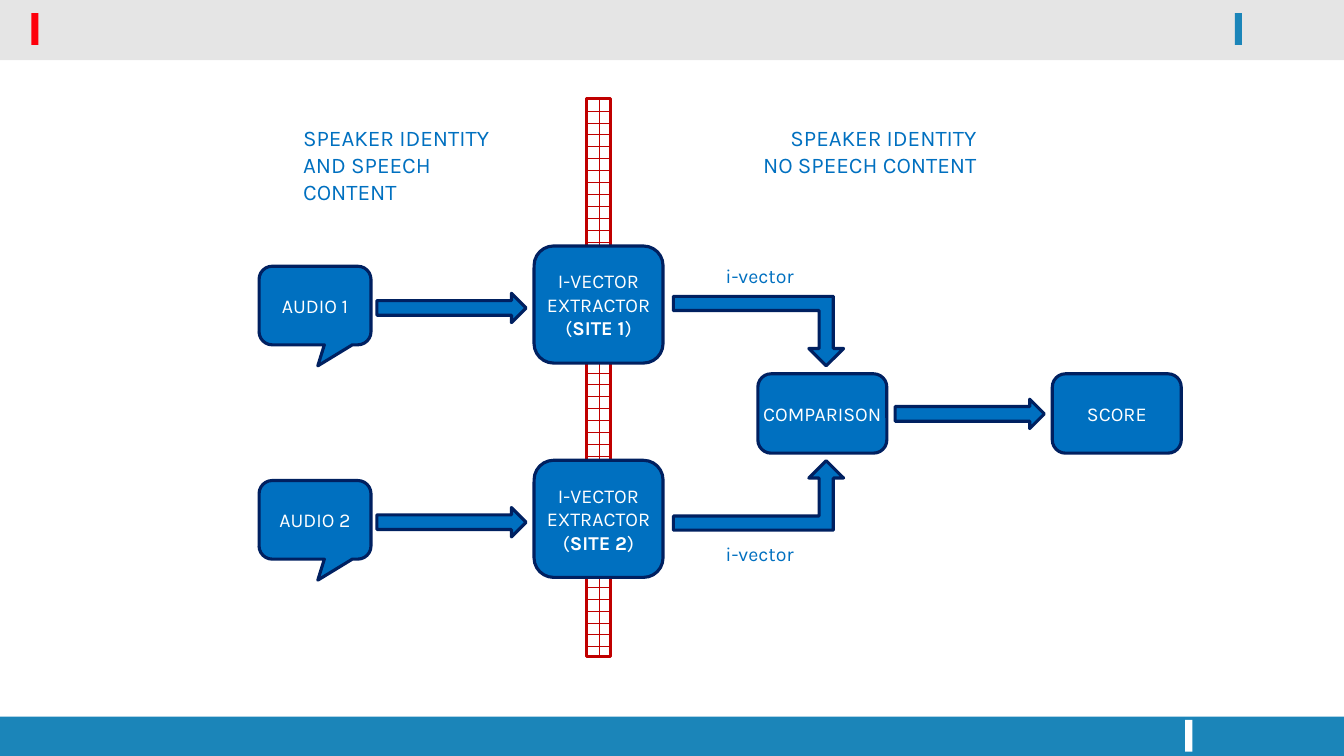
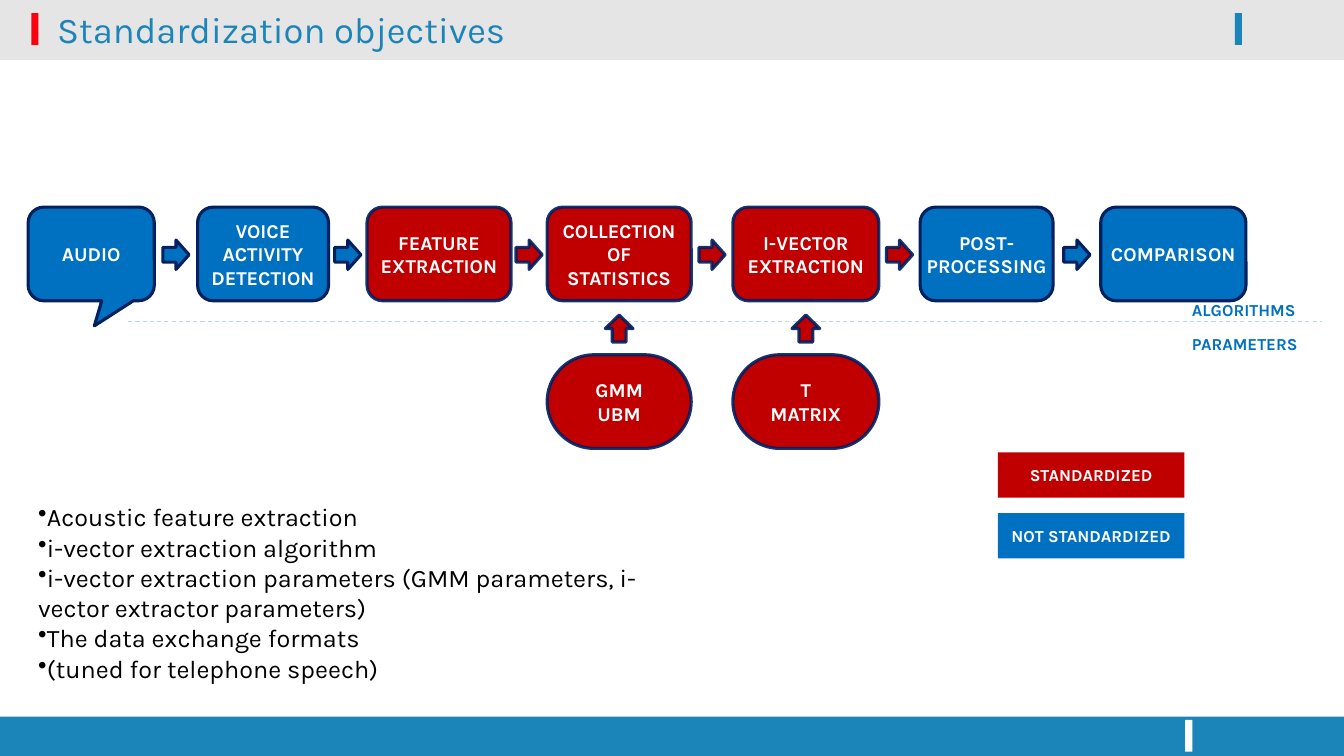
from dataclasses import dataclass

from lxml import etree
from pptx import Presentation
from pptx.dml.color import RGBColor
from pptx.enum.dml import MSO_LINE, MSO_PATTERN
from pptx.enum.shapes import MSO_CONNECTOR, MSO_SHAPE
from pptx.enum.text import MSO_ANCHOR, PP_ALIGN
from pptx.oxml.ns import qn
from pptx.util import Cm, Pt

RECT, ROUNDED = MSO_SHAPE.RECTANGLE, MSO_SHAPE.ROUNDED_RECTANGLE
CALLOUT = MSO_SHAPE.ROUNDED_RECTANGULAR_CALLOUT
RIGHT_ARROW, UP_ARROW = MSO_SHAPE.RIGHT_ARROW, MSO_SHAPE.UP_ARROW
BENT_ARROW = MSO_SHAPE.BENT_UP_ARROW
PROCESS = MSO_SHAPE.FLOWCHART_PROCESS
LEFT, CENTER, RIGHT = PP_ALIGN.LEFT, PP_ALIGN.CENTER, PP_ALIGN.RIGHT
TOP, MIDDLE = MSO_ANCHOR.TOP, MSO_ANCHOR.MIDDLE


@dataclass(frozen=True)
class Theme:
    font: str = "Karla"
    black: str = "000000"
    white: str = "FFFFFF"
    band: str = "1B85B9"
    accent: str = "FE000C"
    blue: str = "0070C0"
    red: str = "C00000"
    navy: str = "002060"
    divider: str = "B6DCDF"
    title_size: float = 26
    list_size: float = 18
    heading_size: float = 16
    node_size: float = 14
    label_size: float = 12
    outline: float = 2.25


@dataclass(frozen=True)
class Box:
    """Left, top, width and height in centimetres."""
    left: float
    top: float
    width: float
    height: float

    def down(self, distance: float) -> "Box":
        return Box(self.left, self.top + distance, self.width, self.height)

    def lengths(self) -> tuple:
        return Cm(self.left), Cm(self.top), Cm(self.width), Cm(self.height)


@dataclass(frozen=True)
class Band:
    box: Box
    color: str
    opacity: int = 100


@dataclass(frozen=True)
class Step:
    text: str
    left: float
    width: float
    color: str
    parameter: str = ""


THEME = Theme()
SLIDE_W, SLIDE_H = 33.87, 19.05

BANDS = [
    Band(Box(0, 1.42, SLIDE_W, 0.1), THEME.black, 10),
    Band(Box(0, 18.06, SLIDE_W, 0.99), THEME.band),
    Band(Box(0, 0, SLIDE_W, 1.42), THEME.black, 10),
    Band(Box(0.79, 0.33, 0.18, 0.8), THEME.accent),
    Band(Box(31.12, 0.33, 0.18, 0.8), THEME.band),
    Band(Box(29.87, 18.14, 0.18, 0.8), THEME.white),
]


# Shared drawing functions
def rgb(color: str) -> RGBColor:
    return RGBColor.from_string(color)


def set_opacity(element, percent: int) -> None:
    for color in element.iter(qn("a:srgbClr")):
        etree.SubElement(color, qn("a:alpha")).set("val", str(percent * 1000))


def write(shape, text: str, *, size: float, color: str, bold: bool = False,
          align=LEFT, anchor=TOP, wrap: bool = True, bullet: str = "") -> None:
    """One paragraph a line; words between asterisks are bold."""
    frame = shape.text_frame
    frame.word_wrap = wrap
    frame.vertical_anchor = anchor
    for index, line in enumerate(text.split("\n")):
        paragraph = frame.add_paragraph() if index else frame.paragraphs[0]
        paragraph.alignment = align
        if bullet:
            properties = paragraph._p.get_or_add_pPr()
            properties.set("marL", "0")
            properties.set("indent", "0")
            etree.SubElement(properties, qn("a:buChar")).set("char", bullet)
        for part, words in enumerate(line.split("*")):
            if not words:
                continue
            run = paragraph.add_run()
            run.text = words
            run.font.name = THEME.font
            run.font.size = Pt(size)
            run.font.bold = bold or part % 2 == 1
            run.font.color.rgb = rgb(color)


def add_text(slide, box: Box, text: str, **text_format) -> None:
    write(slide.shapes.add_textbox(*box.lengths()), text, **text_format)


def add_block(slide, kind, box: Box, color: str, outline: str = ""):
    block = slide.shapes.add_shape(kind, *box.lengths())
    block.shadow.inherit = False
    block.fill.solid()
    block.fill.fore_color.rgb = rgb(color)
    if outline:
        block.line.color.rgb = rgb(outline)
        block.line.width = Pt(THEME.outline)
    else:
        block.line.fill.background()
    return block


def add_node(slide, kind, box: Box, text: str = "", color: str = THEME.blue,
             bold: bool = False, adjustments: tuple = ()):
    node = add_block(slide, kind, box, color, THEME.navy)
    if color == THEME.red:
        set_opacity(node._element.spPr.find(qn("a:ln")), 90)
    if kind == CALLOUT:
        adjustments = (0.025, 0.768, 0.167)
    for index, value in enumerate(adjustments):
        node.adjustments[index] = value
    if text:
        write(node, text, size=THEME.node_size, color=THEME.white, bold=bold,
              align=CENTER, anchor=MIDDLE, wrap=False)
    return node


def new_slide(deck, title: str = ""):
    slide = deck.slides.add_slide(deck.slide_layouts[6])
    for band in BANDS:
        block = add_block(slide, RECT, band.box, band.color)
        if band.opacity < 100:
            set_opacity(block._element.spPr, band.opacity)
    if title:
        add_text(slide, Box(1.19, 0, 26.92, 1.45), title,
                 size=THEME.title_size, color=THEME.band, anchor=MIDDLE)
    return slide


# Slide 1: two sites compare speakers without sharing speech
def build_comparison(deck) -> None:
    slide = new_slide(deck)

    # Wall between speech content and identity
    wall = add_block(slide, PROCESS, Box(14.78, 2.49, 0.61, 14.05),
                     THEME.white, THEME.red)
    wall.line.width = Pt(2)
    wall.fill.patterned()
    wall.fill.pattern = MSO_PATTERN.HORIZONTAL_BRICK
    wall.fill.fore_color.rgb = rgb(THEME.red)
    wall.fill.back_color.rgb = rgb(THEME.white)

    # One row for each site
    site_pitch = 5.4
    for site in (1, 2):
        drop = (site - 1) * site_pitch
        add_node(slide, CALLOUT, Box(6.53, 6.71, 2.82, 1.98).down(drop),
                 f"AUDIO {site}")
        add_node(slide, RIGHT_ARROW, Box(9.5, 7.39, 3.76, 0.74).down(drop))
        add_node(slide, ROUNDED, Box(13.46, 6.2, 3.25, 2.95).down(drop),
                 f"I-VECTOR\nEXTRACTOR\n(*SITE {site}*)")

    # Both i-vectors meet in the comparison
    for top, label_top, flipped in ((7.47, 6.53, True), (11.61, 13.54, False)):
        turn = add_node(slide, BENT_ARROW, Box(16.97, top, 4.29, 1.75),
                        adjustments=(0.204, 0.25, 0.25))
        if flipped:
            turn._element.spPr.get_or_add_xfrm().set("flipV", "1")
        add_text(slide, Box(18.04, label_top, 2.97, 0.86), "i-vector",
                 size=THEME.node_size, color=THEME.blue)
    add_node(slide, ROUNDED, Box(19.1, 9.42, 3.25, 2), "COMPARISON")
    add_node(slide, RIGHT_ARROW, Box(22.56, 10.06, 3.76, 0.74))
    add_node(slide, ROUNDED, Box(26.52, 9.42, 3.25, 2), "SCORE")

    # What is known on each side of the wall
    add_text(slide, Box(7.39, 3, 5.84, 1.63),
             "SPEAKER IDENTITY\nAND SPEECH CONTENT",
             size=THEME.heading_size, color=THEME.blue)
    add_text(slide, Box(16.71, 3, 8.15, 1.63),
             "SPEAKER IDENTITY\nNO SPEECH CONTENT",
             size=THEME.heading_size, color=THEME.blue, align=RIGHT)


# Slide 2: which steps of the chain are standardized
STEPS = [
    Step("AUDIO", 0.71, 3.18, THEME.blue),
    Step("VOICE\nACTIVITY\nDETECTION", 4.98, 3.3, THEME.blue),
    Step("FEATURE\nEXTRACTION", 9.25, 3.63, THEME.red),
    Step("COLLECTION\nOF\nSTATISTICS", 13.79, 3.63, THEME.red, "GMM\nUBM"),
    Step("I-VECTOR\nEXTRACTION", 18.47, 3.68, THEME.red, "T\nMATRIX"),
    Step("POST-\nPROCESSING", 23.19, 3.35, THEME.blue),
    Step("COMPARISON", 27.74, 3.66, THEME.blue),
]

OBJECTIVES = """Acoustic feature extraction
i-vector extraction algorithm
i-vector extraction parameters (GMM parameters, i-vector extractor parameters)
The data exchange formats
(tuned for telephone speech)"""


def build_objectives(deck) -> None:
    slide = new_slide(deck, "Standardization objectives")

    # Divider between algorithms and parameters
    divider = slide.shapes.add_connector(
        MSO_CONNECTOR.STRAIGHT, Cm(3.23), Cm(8.1), Cm(33.32), Cm(8.1))
    divider.line.color.rgb = rgb(THEME.divider)
    divider.line.width = Pt(0.75)
    divider.line.dash_style = MSO_LINE.DASH
    etree.SubElement(divider._element.spPr, qn("a:effectLst"))

    # Steps with their parameters below
    for index, step in enumerate(STEPS):
        box = Box(step.left, 5.22, step.width, 2.36)
        add_node(slide, ROUNDED if index else CALLOUT, box, step.text,
                 step.color, bold=True)
        if step.parameter:
            add_node(slide, ROUNDED, box.down(3.72), step.parameter,
                     step.color, bold=True, adjustments=(0.5,))
            middle = step.left + step.width / 2
            add_node(slide, UP_ARROW, Box(middle - 0.35, 7.94, 0.7, 0.68),
                     color=step.color)

    # Arrows centred in the gaps, coloured like the step they leave
    for step, following in zip(STEPS, STEPS[1:]):
        middle = (step.left + step.width + following.left) / 2
        add_node(slide, RIGHT_ARROW, Box(middle - 0.33, 6.05, 0.66, 0.74),
                 color=step.color)

    # Names of the two layers
    for text, top in (("ALGORITHMS", 7.42), ("PARAMETERS", 8.28)):
        add_text(slide, Box(29.79, top, 3.66, 1.52), text,
                 size=THEME.label_size, color=THEME.blue, bold=True)

    # Legend
    legend = (("STANDARDIZED", THEME.red), ("NOT STANDARDIZED", THEME.blue))
    for row, (text, color) in enumerate(legend):
        key = add_block(slide, RECT, Box(25.15, 11.4 + row * 1.53, 4.7, 1.14),
                        color)
        write(key, text, size=THEME.label_size, color=THEME.white, bold=True,
              align=CENTER, anchor=MIDDLE, wrap=False)

    # Objectives
    add_text(slide, Box(0.71, 12.52, 16.94, 4.88), OBJECTIVES,
             size=THEME.list_size, color=THEME.black, bullet="•")


def main() -> None:
    deck = Presentation()
    deck.slide_width, deck.slide_height = Cm(SLIDE_W), Cm(SLIDE_H)
    build_comparison(deck)
    build_objectives(deck)
    deck.save("out.pptx")


if __name__ == "__main__":
    main()
